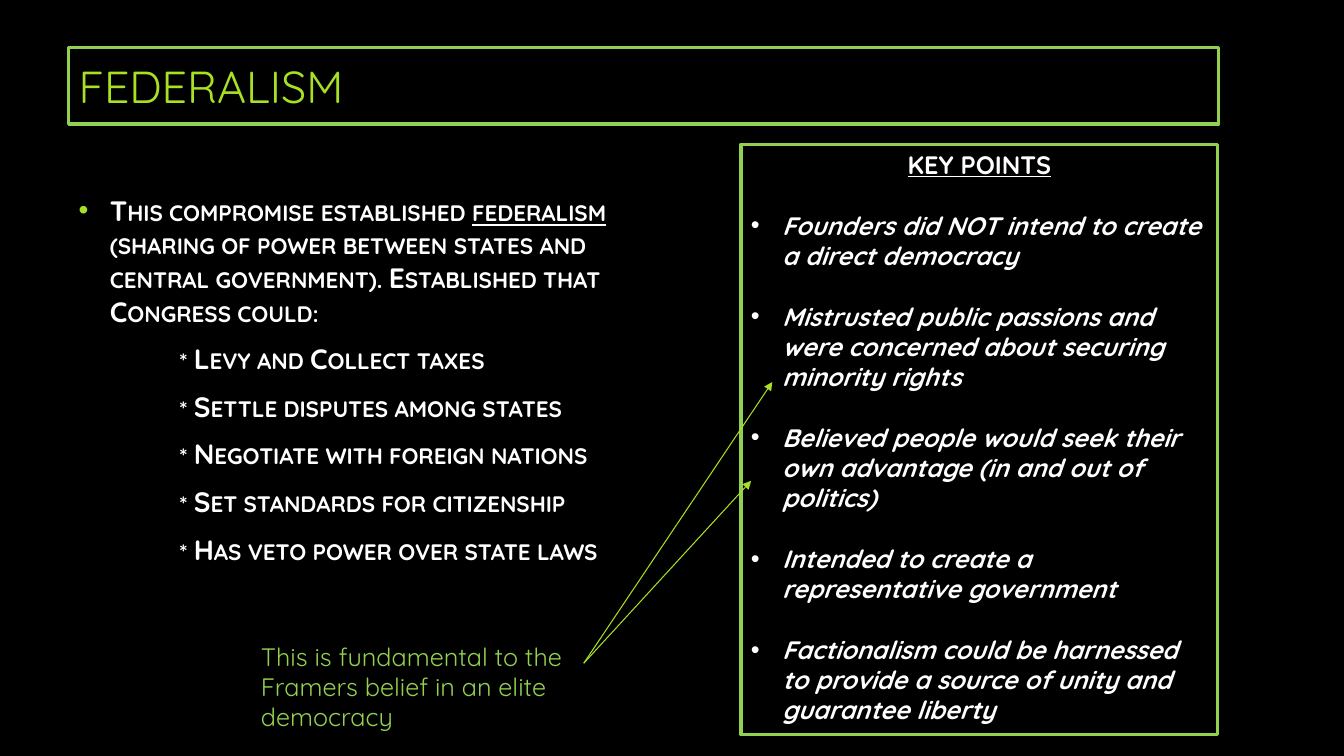
from lxml import etree
from pptx import Presentation
from pptx.dml.color import RGBColor
from pptx.enum.shapes import MSO_CONNECTOR as Connector, MSO_SHAPE as Preset
from pptx.enum.text import MSO_ANCHOR as Anchor, MSO_AUTO_SIZE as AutoSize, PP_ALIGN as Align
from pptx.oxml.ns import qn
from pptx.util import Inches, Pt

COLORS = {"ground": "000000", "text": "FFFFFF", "lime": "A9E023", "green": "92D050"}
FONT = "Quicksand"
HANGING = 0.31

INTRO = [
    ("This compromise established ", False),
    ("federalism", True),
    (" (sharing of power between states and central government). "
     "Established that Congress could:", False),
]
POWERS = [
    "Levy and Collect taxes",
    "Settle disputes among states",
    "Negotiate with foreign nations",
    "Set standards for citizenship",
    "Has veto power over state laws",
]
KEY_POINTS = [
    "Founders did NOT intend to create a direct democracy",
    "Mistrusted public passions and were concerned about securing minority rights",
    "Believed people would seek their own advantage (in and out of politics)",
    "Intended to create a representative government",
    "Factionalism could be harnessed to provide a source of unity and guarantee liberty",
]


def rgb(color):
    return RGBColor.from_string(COLORS[color])


def apply(target, formats):
    for name, value in formats.items():
        setattr(target, name, value)


def place(shape, box):
    apply(shape, dict(zip(("left", "top", "width", "height"), map(Inches, box))))


def outline(shape):
    shape.fill.background()
    shape.line.color.rgb = rgb("green")
    shape.line.width = Pt(2.25)


def add_text(paragraph, text, color, small_caps=False, **formats):
    run = paragraph.add_run()
    run.text = text
    apply(run.font, {"name": FONT, **formats})
    run.font.color.rgb = rgb(color)
    if small_caps:
        run.font._element.set("cap", "small")


def set_bullet(paragraph, color=None, margin=HANGING, indent=-HANGING):
    properties = paragraph._p.get_or_add_pPr()
    properties.set("marL", str(Inches(margin)))
    properties.set("indent", str(Inches(indent)))
    if color is None:
        etree.SubElement(properties, qn("a:buNone"))
        return
    bullet_color = etree.SubElement(properties, qn("a:buClr"))
    etree.SubElement(bullet_color, qn("a:srgbClr"), val=COLORS[color])
    etree.SubElement(properties, qn("a:buFont"), typeface="Arial")
    etree.SubElement(properties, qn("a:buChar"), char="•")


def next_paragraph(frame, index):
    return frame.add_paragraph() if index else frame.paragraphs[0]


def fill_title(title, box):
    place(title, box)
    outline(title)
    frame = title.text_frame
    apply(frame, {"vertical_anchor": Anchor.MIDDLE, "auto_size": AutoSize.NONE})
    heading = frame.paragraphs[0]
    heading.alignment = Align.LEFT
    add_text(heading, "FEDERALISM", "lime", size=Pt(32))


def fill_compromise(body, box):
    place(body, box)
    frame = body.text_frame
    apply(frame, {"vertical_anchor": Anchor.MIDDLE, "auto_size": AutoSize.NONE})
    lines = [INTRO] + [[("* " + power, False)] for power in POWERS]
    for index, pieces in enumerate(lines):
        paragraph = next_paragraph(frame, index)
        apply(paragraph, {"space_before": Pt(4), "space_after": Pt(6)})
        if index:
            set_bullet(paragraph, margin=1, indent=0)
        else:
            set_bullet(paragraph, "lime")
        for text, underlined in pieces:
            add_text(paragraph, text, "text", small_caps=True,
                     size=Pt(20), bold=True, underline=underlined)


def add_key_points(slide, box):
    panel = slide.shapes.add_shape(Preset.RECTANGLE, *map(Inches, box))
    panel.shadow.inherit = False
    outline(panel)
    frame = panel.text_frame
    apply(frame, {"word_wrap": True, "vertical_anchor": Anchor.TOP})
    heading = frame.paragraphs[0]
    heading.alignment = Align.CENTER
    add_text(heading, "KEY POINTS", "text", size=Pt(18), bold=True, underline=True)
    for point in KEY_POINTS:
        paragraph = frame.add_paragraph()
        apply(paragraph, {"alignment": Align.LEFT, "space_before": Pt(21.8)})
        set_bullet(paragraph, "text")
        add_text(paragraph, point, "text", size=Pt(18), bold=True, italic=True)


def add_arrows(slide, start, ends):
    for end in ends:
        arrow = slide.shapes.add_connector(Connector.STRAIGHT, *map(Inches, start + end))
        arrow.line.color.rgb = rgb("lime")
        arrow.line.width = Pt(0.75)
        etree.SubElement(arrow.line._get_or_add_ln(), qn("a:tailEnd"), type="triangle")
        etree.SubElement(arrow._element.spPr, qn("a:effectLst"))


def add_remark(slide, box):
    remark = slide.shapes.add_textbox(*map(Inches, box))
    frame = remark.text_frame
    frame.word_wrap = True
    add_text(frame.paragraphs[0],
             "This is fundamental to the Framers belief in an elite democracy",
             "green", size=Pt(18))


def main():
    deck = Presentation()
    apply(deck, {"slide_width": Inches(13.33), "slide_height": Inches(7.5)})
    slide = deck.slides.add_slide(deck.slide_layouts[1])
    slide.background.fill.solid()
    slide.background.fill.fore_color.rgb = rgb("ground")
    fill_title(slide.shapes.title, (0.68, 0.47, 11.41, 0.76))
    fill_compromise(slide.placeholders[1], (0.68, 1.56, 6.16, 4.41))
    add_key_points(slide, (7.35, 1.43, 4.73, 5.86))
    add_arrows(slide, (5.79, 6.58), [(7.66, 3.79), (7.45, 4.77)])
    add_remark(slide, (2.49, 6.31, 3.57, 1.01))
    deck.save("out.pptx")


if __name__ == "__main__":
    main()
